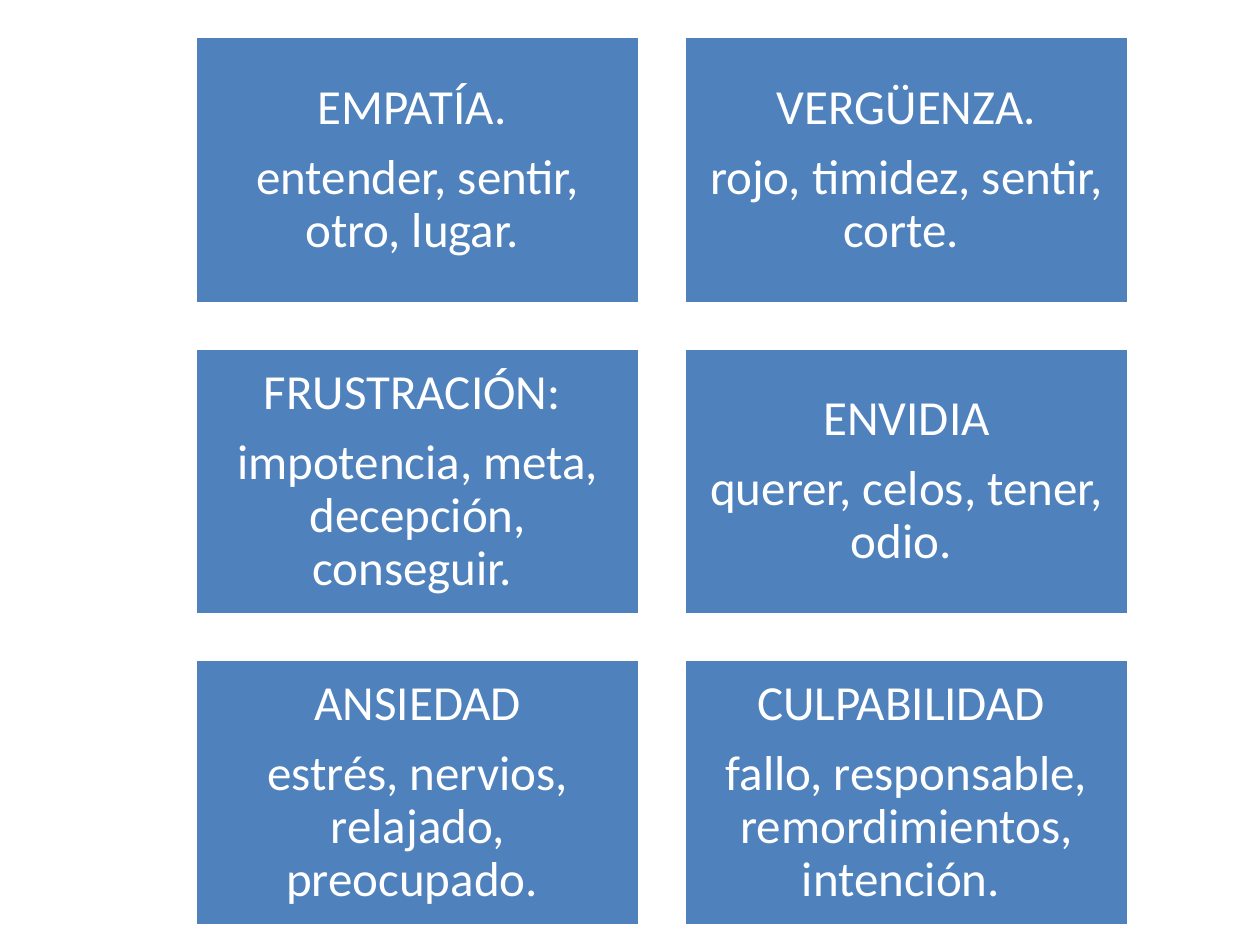
from pptx import Presentation
from pptx.dml.color import RGBColor
from pptx.enum.shapes import MSO_SHAPE
from pptx.enum.text import MSO_ANCHOR, PP_ALIGN
from pptx.util import Inches, Pt

RECT = MSO_SHAPE.RECTANGLE
MIDDLE = MSO_ANCHOR.MIDDLE
CENTER = PP_ALIGN.CENTER

COLUMNS = 2
EMOTIONS = [
    ("EMPATÍA. ", "entender, sentir, otro, lugar. "),
    ("VERGÜENZA.", "rojo, timidez, sentir, corte. "),
    ("FRUSTRACIÓN: ", "impotencia, meta, decepción, conseguir. "),
    ("ENVIDIA", "querer, celos, tener, odio. "),
    ("ANSIEDAD", "estrés, nervios, relajado, preocupado. "),
    ("CULPABILIDAD ", "fallo, responsable, remordimientos, intención. "),
]


def rgb(value):
    return RGBColor.from_string(value)


def apply(target, values):
    for name, value in values.items():
        setattr(target, name, value)


class Deck:
    """Hold the style, the card grid and the current slide."""

    LEFT, TOP = 1.55, 0.29
    WIDTH, HEIGHT, GAP = 3.53, 2.12, 0.35
    FILL, INK = "4F81BD", "FFFFFF"
    FRAME = {
        "word_wrap": True,
        "vertical_anchor": MIDDLE,
        "margin_left": Inches(0.12),
        "margin_right": Inches(0.12),
        "margin_top": Inches(0.12),
        "margin_bottom": Inches(0.12),
    }
    PARAGRAPH = {"alignment": CENTER, "line_spacing": 0.9, "space_after": Pt(9.8)}
    FONT = {"name": "Calibri", "size": Pt(28)}

    def __init__(self, prs):
        self.slide = prs.slides.add_slide(prs.slide_layouts[6])

    def card(self, col, row, lines):
        x = self.LEFT + col * (self.WIDTH + self.GAP)
        y = self.TOP + row * (self.HEIGHT + self.GAP)
        box = [Inches(v) for v in (x, y, self.WIDTH, self.HEIGHT)]
        sp = self.slide.shapes.add_shape(RECT, *box)
        sp.shadow.inherit = False
        sp.fill.solid()
        sp.fill.fore_color.rgb = rgb(self.FILL)
        sp.line.color.rgb = rgb(self.INK)
        sp.line.width = Pt(2)
        self.text(sp.text_frame, lines)

    def text(self, tf, lines):
        apply(tf, self.FRAME)
        for i, line in enumerate(lines):
            p = tf.add_paragraph() if i else tf.paragraphs[0]
            apply(p, self.PARAGRAPH)
            r = p.add_run()
            r.text = line
            apply(r.font, self.FONT)
            r.font.color.rgb = rgb(self.INK)


def main():
    prs = Presentation()
    prs.slide_width, prs.slide_height = Inches(10), Inches(7.5)
    deck = Deck(prs)
    for i, lines in enumerate(EMOTIONS):
        row, col = divmod(i, COLUMNS)
        deck.card(col, row, lines)
    prs.save("out.pptx")


if __name__ == "__main__":
    main()
